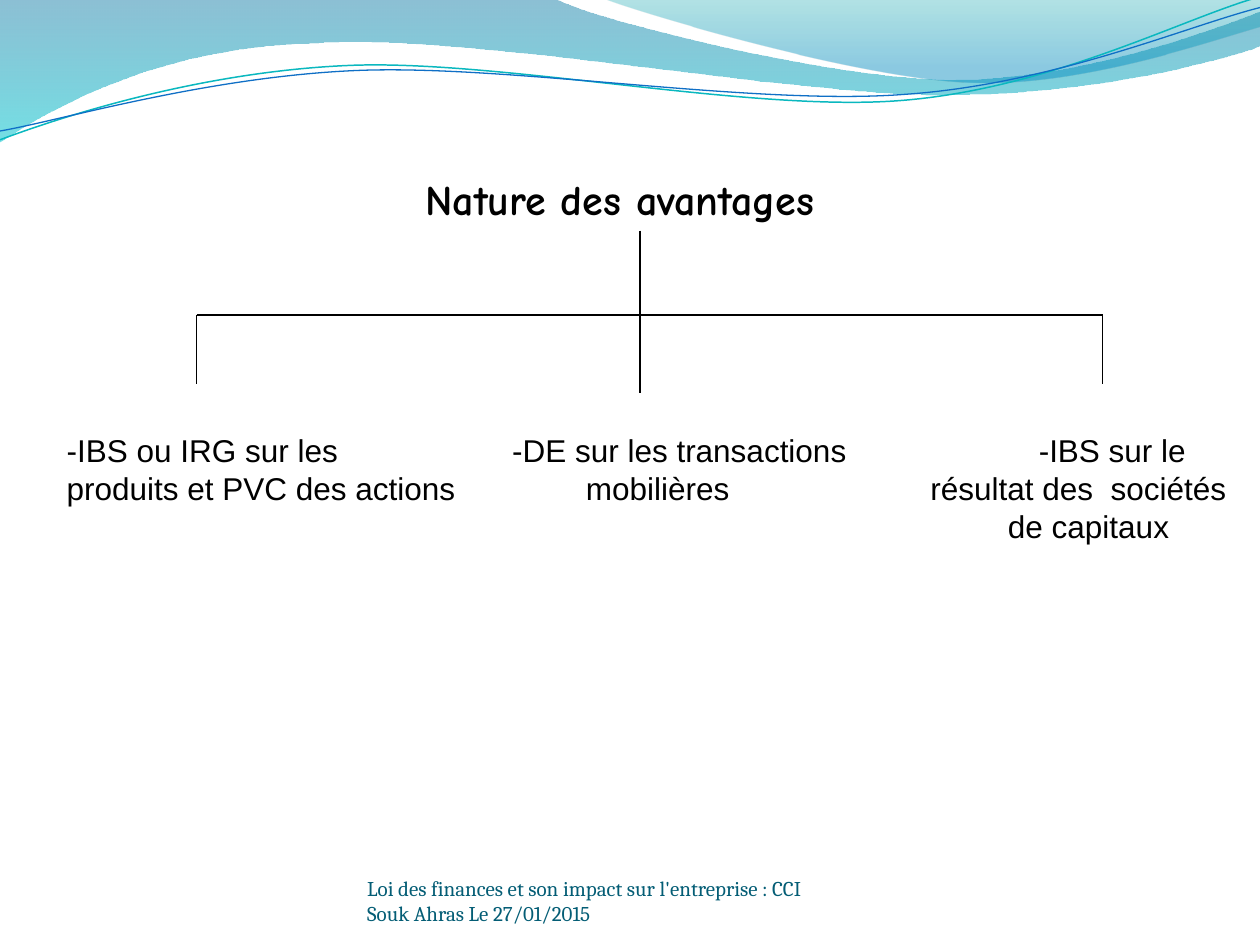
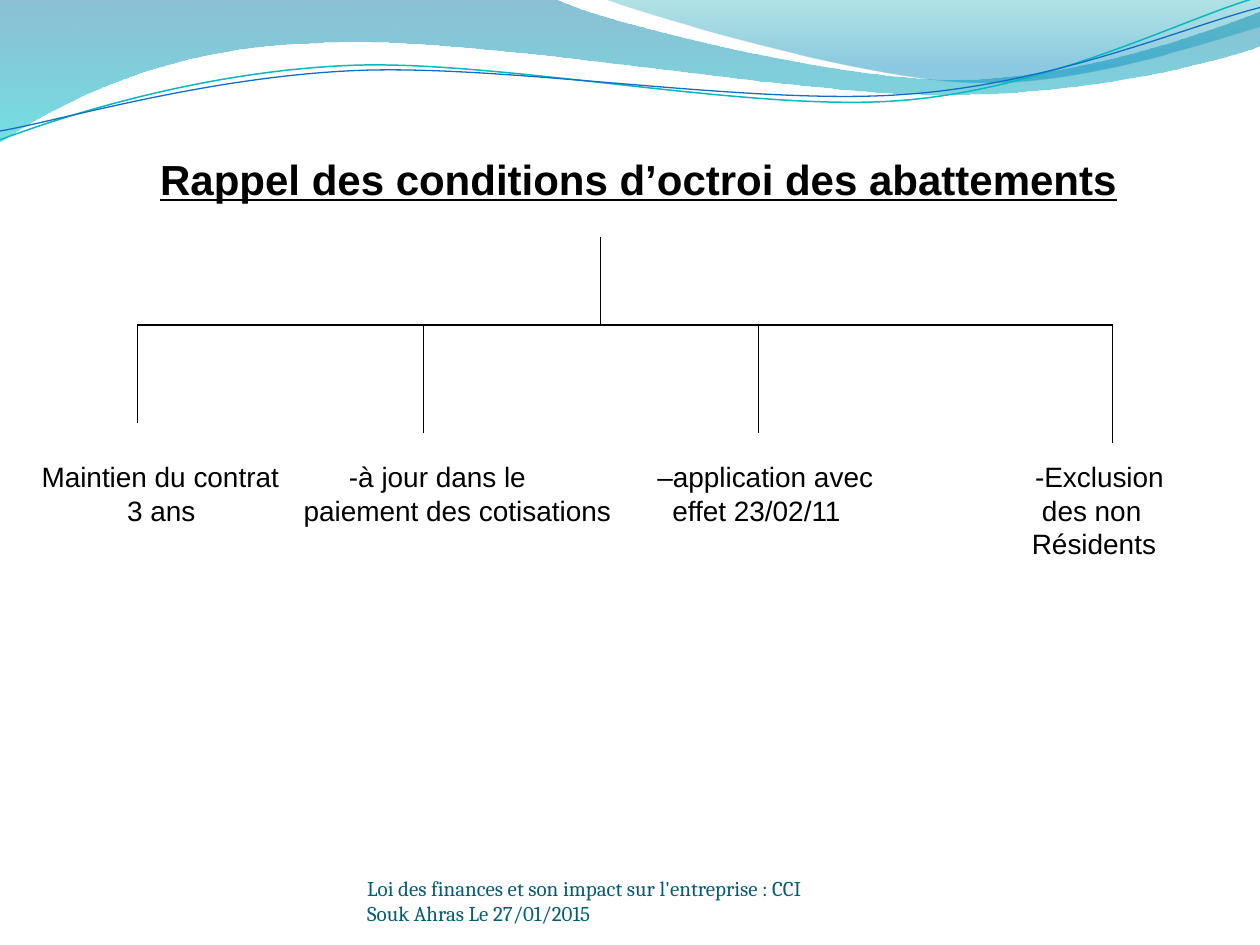
from dataclasses import dataclass

from pptx import Presentation
from pptx.dml.color import RGBColor
from pptx.enum.shapes import MSO_CONNECTOR as Connector
from pptx.enum.text import MSO_ANCHOR as Anchor, PP_ALIGN as Align
from pptx.oxml.xmlchemy import OxmlElement as Element
from pptx.util import Inches, Pt

WIDTH, HEIGHT = Inches(10), Inches(7.5)
COLUMN, ROW = WIDTH / 100, HEIGHT / 75


@dataclass(frozen=True)
class Theme:
    ink: str = "000000"
    footer_ink: str = "045D75"
    teal_line: str = "0AB8BF"
    blue_line: str = "0F6FC6"
    body_font: str = "Arial"
    heading_font: str = "Comic Neue"
    footer_font: str = "Cambria"
    title_size: float = 24
    footer_size: float = 12
    rule_width: float = 0.75
    teal_width: float = 0.85


THEME = Theme()

LARGE_WAVE = (
    [(0, 0)],
    [(44, -0.1)],
    [(47.6, 1.7), (66.4, 6.3), (75.8, 6.3)],
    [(85.3, 6.3), (95.8, 2.6), (100, 0.9)],
    [(100.1, 3.6)],
    [(98.3, 4.4), (87, 7.6), (74.6, 7.5)],
    [(62.2, 7.5), (38.2, 2.8), (25.7, 3.4)],
    [(12.9, 3.6), (4.6, 8.3), (-0.1, 11.3)],
)
RIGHT_WAVE = (
    [(47.9, -0.1)],
    [(50.9, 1.1), (68.2, 6.2), (76.9, 6.5)],
    [(85.6, 6.9), (96.1, 3.2), (100, 2.1)],
    [(100, 0)],
)
TEAL_STROKE = (
    [(0, 11.1)],
    [(4.8, 9.3), (15.8, 5.7), (27.7, 5.2)],
    [(39.5, 4.7), (59.3, 8.9), (71.3, 8)],
    [(83.3, 7.1), (93.8, 1.5), (99.8, -0.2)],
)
BLUE_STROKE = (
    [(0, 10.4)],
    [(4.7, 9.6), (16.4, 6.1), (28.3, 5.6)],
    [(40.3, 5.1), (59.7, 8.4), (71.7, 7.5)],
    [(83.6, 6.7), (94.1, 2.1), (100, 0.6)],
)


def place(column, row):
    return round(column * COLUMN), round(row * ROW)


def bend(shape, straight, segment):
    curve = Element("a:cubicBezTo")
    for x, y in (place(*point) for point in segment):
        knot = Element("a:pt")
        knot.set("x", str(x - shape.left))
        knot.set("y", str(y - shape.top))
        curve.append(knot)
    straight.getparent().replace(straight, curve)


def add_outline(slide, outline, closed):
    start, *others = [place(*segment[-1]) for segment in outline]
    builder = slide.shapes.build_freeform(*start, scale=1.0)
    builder.add_line_segments(others, close=closed)
    shape = builder.convert_to_shape()
    shape.shadow.inherit = False
    for straight, segment in zip(shape.element.xpath(".//a:lnTo"), outline[1:]):
        if len(segment) == 3:
            bend(shape, straight, segment)
    return shape


def add_wave(slide, outline, stops):
    wave = add_outline(slide, outline, True)
    wave.line.fill.background()
    wave.fill.gradient()
    wave.fill.gradient_angle = 270
    for stop, (position, color, _) in zip(wave.fill.gradient_stops, stops):
        stop.position = position
        stop.color.rgb = RGBColor.from_string(color)
    for tint, (_, _, opacity) in zip(wave.element.xpath(".//a:gs/a:srgbClr"), stops):
        alpha = Element("a:alpha")
        alpha.set("val", str(opacity * 1000))
        tint.append(alpha)


def style_line(line, color, width):
    line.color.rgb = RGBColor.from_string(color)
    line.width = Pt(width)


def add_stroke(slide, outline, color, width):
    stroke = add_outline(slide, outline, False)
    stroke.fill.background()
    style_line(stroke.line, color, width)


def add_rule(slide, start, end):
    rule = slide.shapes.add_connector(Connector.STRAIGHT, *place(*start), *place(*end))
    style_line(rule.line, THEME.ink, THEME.rule_width)
    rule.element.spPr.append(Element("a:effectLst"))


def add_frame(slide, corner, size, anchor):
    frame = slide.shapes.add_textbox(*place(*corner), *place(*size)).text_frame
    frame.word_wrap = True
    frame.vertical_anchor = anchor
    return frame


def add_run(paragraph, text, font, size, color=THEME.ink, bold=None, underline=None):
    run = paragraph.add_run()
    run.text = text
    run.font.name = font
    run.font.size = Pt(size)
    run.font.color.rgb = RGBColor.from_string(color)
    run.font.bold = bold
    run.font.underline = underline


def add_title(slide, text, corner, size, font, align=Align.LEFT, underline=None):
    paragraph = add_frame(slide, corner, size, Anchor.MIDDLE).paragraphs[0]
    paragraph.alignment = align
    add_run(paragraph, text, font, THEME.title_size, bold=True, underline=underline)


def set_tabs(paragraph, positions):
    tabs = Element("a:tabLst")
    for position in positions:
        tab = Element("a:tab")
        tab.set("pos", str(round(position * COLUMN)))
        tab.set("algn", "l")
        tabs.append(tab)
    paragraph._p.get_or_add_pPr().append(tabs)


def add_branch_labels(slide, corner, size, lines, text_size):
    frame = add_frame(slide, corner, size, Anchor.MIDDLE)
    frame.margin_left = 0
    for index, line in enumerate(lines):
        paragraph = frame.add_paragraph() if index else frame.paragraphs[0]
        set_tabs(paragraph, [column - corner[0] for column, _ in line])
        text = "".join("\t" + words for _, words in line)
        add_run(paragraph, text, THEME.body_font, text_size)


def add_tree(slide, bar_row, trunk, drops):
    column, top, bottom = trunk
    add_rule(slide, (drops[0][0], bar_row), (drops[-1][0], bar_row))
    add_rule(slide, (column, top), (column, bottom))
    for drop_column, drop_end in drops:
        add_rule(slide, (drop_column, bar_row), (drop_column, drop_end))


def add_footer(slide):
    frame = add_frame(slide, (29.15, 69.5), (36.7, 4), Anchor.BOTTOM)
    frame.margin_left = frame.margin_right = frame.margin_top = frame.margin_bottom = 0
    add_run(
        frame.paragraphs[0],
        "Loi des finances et son impact sur l'entreprise : CCI Souk Ahras Le 27/01/2015",
        THEME.footer_font, THEME.footer_size, THEME.footer_ink,
    )


def start_slide(deck):
    slide = deck.slides.add_slide(deck.slide_layouts[6])
    add_wave(slide, LARGE_WAVE, [(0, "0074A1", 45), (1, "00C6CF", 55)])
    add_wave(slide, RIGHT_WAVE, [(0, "00A1A9", 30), (0.8, "008BBF", 45)])
    add_stroke(slide, TEAL_STROKE, THEME.teal_line, THEME.teal_width)
    add_stroke(slide, BLUE_STROKE, THEME.blue_line, THEME.rule_width)
    return slide


def add_benefits(deck):
    slide = start_slide(deck)
    add_title(slide, "Nature des avantages", (28.1, 13.22), (42.2, 5.1),
              THEME.heading_font, Align.CENTER)
    add_branch_labels(slide, (2.3, 32.8), (97.7, 11.8), [
        [(5.3, "-IBS ou IRG sur les"), (40.65, "-DE sur les transactions"),
         (82.45, "-IBS sur le")],
        [(5.3, "produits et PVC des actions"), (46.5, "mobilières"),
         (73.85, "résultat des"), (88.15, "sociétés")],
        [(80, "de capitaux")],
    ], 18)
    add_tree(slide, 25, (50.8, 18.3, 31.2), [(15.6, 30.5), (87.5, 30.5)])
    add_footer(slide)


def add_conditions(deck):
    slide = start_slide(deck)
    add_title(slide, "Rappel des conditions d’octroi des abattements",
              (11.73, 11.65), (83.6, 5.1), THEME.body_font, underline=True)
    add_branch_labels(slide, (2.3, 35.92), (95.3, 9.1), [
        [(3.3, "Maintien du contrat"), (27.7, "-à jour dans le"),
         (52.17, "–application avec"), (82.15, "-Exclusion")],
        [(10.1, "3 ans"), (24.1, "paiement des cotisations"),
         (53.37, "effet 23/02/11"), (82.7, "des non")],
        [(81.9, "Résidents")],
    ], 16)
    add_tree(slide, 25.8, (47.65, 18.8, 25.8),
             [(10.9, 33.6), (33.6, 34.4), (60.2, 34.4), (88.3, 35.2)])
    add_footer(slide)


def main():
    deck = Presentation()
    deck.slide_width, deck.slide_height = WIDTH, HEIGHT
    add_benefits(deck)
    add_conditions(deck)
    deck.save("out.pptx")


if __name__ == "__main__":
    main()
